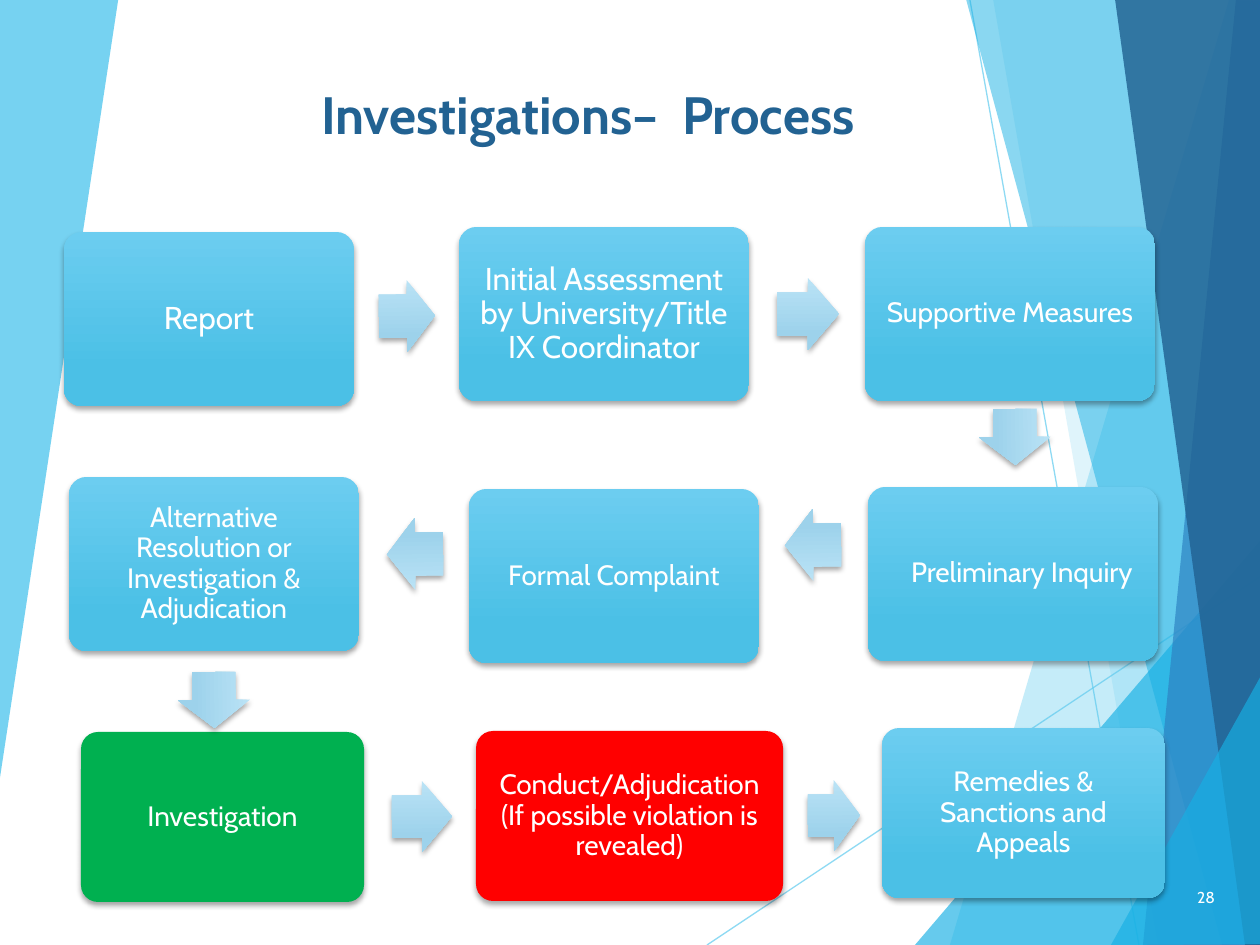
"""Build the investigations process slide: nine linked steps on a faceted backdrop."""
from lxml.etree import SubElement
from pptx import Presentation
from pptx.dml.color import RGBColor
from pptx.enum.shapes import MSO_CONNECTOR, MSO_SHAPE
from pptx.enum.text import MSO_ANCHOR, MSO_AUTO_SIZE, PP_ALIGN
from pptx.oxml.ns import qn
from pptx.util import Pt

PX = 914400 / 126
THEME = {
    "font": "Cabin",
    "sky": "5FCBEF", "azure": "17B0E4", "blue": "2E83C3", "navy": "226292",
    "white": "FFFFFF", "green": "00B050", "red": "FF0000", "shadow": "000000",
    "step": ("6CCDF0", "4BC0E6"), "arrow": ("BAE3F6", "9DD2EB"),
    "title_size": 30, "large": 18, "body": 16, "small": 9,
}


def write(frame, text, size, color, align, anchor, margins, bold=False, spacing=1.0):
    frame.text = text
    left, right, vertical = (round(m * PX) for m in margins)
    frame_format = {
        "word_wrap": True, "auto_size": MSO_AUTO_SIZE.NONE, "vertical_anchor": anchor,
        "margin_left": left, "margin_right": right,
        "margin_top": vertical, "margin_bottom": vertical,
    }
    paragraph = frame.paragraphs[0]
    font = paragraph.runs[0].font
    for target, values in (
        (frame, frame_format),
        (paragraph, {"alignment": align, "line_spacing": spacing}),
        (font, {"name": THEME["font"], "size": Pt(size), "bold": bold}),
    ):
        for key, value in values.items():
            setattr(target, key, value)
    font.color.rgb = RGBColor.from_string(THEME[color])


def add_block(kind, bounds, color, adjustments):
    block = slide.shapes.add_shape(kind, *(round(n * PX) for n in bounds))
    for index, value in enumerate(adjustments):
        block.adjustments[index] = value
    if isinstance(THEME[color], tuple):
        block.fill.gradient()
        block.fill.gradient_angle = 270
        for stop, shade, position in zip(block.fill.gradient_stops, THEME[color], (0, 0.78)):
            stop.color.rgb = RGBColor.from_string(shade)
            stop.position = position
    else:
        block.fill.solid()
        block.fill.fore_color.rgb = RGBColor.from_string(THEME[color])
    block.line.fill.background()
    block.shadow.inherit = False
    effects = block._element.spPr.find(qn("a:effectLst"))
    outer = SubElement(effects, qn("a:outerShdw"), blurRad=str(Pt(3)), dist=str(Pt(2)),
                       dir="5400000", rotWithShape="0")
    shade = SubElement(outer, qn("a:srgbClr"), val=THEME["shadow"])
    SubElement(shade, qn("a:alpha"), val="35000")
    return block


deck = Presentation()
deck.slide_width, deck.slide_height = round(1260 * PX), round(945 * PX)
slide = deck.slides.add_slide(deck.slide_layouts[5])

for ends in ((707, 945, 1261, 576), (970, 0, 1139, 945)):
    ray = slide.shapes.add_connector(MSO_CONNECTOR.STRAIGHT, *(round(n * PX) for n in ends))
    ray.line.width = Pt(0.75)
    ray.line.color.rgb = RGBColor.from_string(THEME["sky"])
    ray_color = ray._element.spPr.find(".//" + qn("a:srgbClr"))
    SubElement(ray_color, qn("a:alpha"), val="70000")
    SubElement(ray._element.spPr, qn("a:effectLst"))

facets = [
    ("sky", 36, [(1229, 0), (950, 945), (1262, 946), (1261, 1)]),
    ("sky", 20, [(993, -1), (1158, 945), (1261, 945), (1261, -1)]),
    ("azure", 66, [(915, 945), (1260, 541), (1261, 945)]),
    ("azure", 50, [(966, -1), (1222, 945), (1261, 944), (1261, -1)]),
    ("blue", 70, [(1236, -1), (1143, 945), (1261, 945), (1260, -1)]),
    ("navy", 82, [(1115, -1), (1245, 945), (1262, 945), (1260, -1)]),
    ("azure", 66, [(1111, 945), (1262, 674), (1262, 944)]),
    ("sky", 85, [(-1, 0), (118, -1), (118, 1), (-1, 784)]),
]
for color, opacity, corners in facets:
    outline = slide.shapes.build_freeform(*corners[0], scale=PX)
    outline.add_line_segments(corners[1:], close=True)
    facet = outline.convert_to_shape()
    facet.fill.solid()
    facet.fill.fore_color.rgb = RGBColor.from_string(THEME[color])
    facet_color = facet._element.spPr.find(".//" + qn("a:srgbClr"))
    SubElement(facet_color, qn("a:alpha"), val=str(opacity * 1000))
    facet.line.fill.background()
    facet.shadow.inherit = False

title = slide.shapes.title
for side, length in {"left": 21, "top": -6, "width": 1134, "height": 157}.items():
    setattr(title, side, round(length * PX))
write(title.text_frame, "Investigations–  Process", THEME["title_size"], "navy",
      PP_ALIGN.CENTER, MSO_ANCHOR.BOTTOM, (13, 13, 6), bold=True)

page_number = slide.shapes.add_textbox(*(round(n * PX) for n in (935, 872, 293, 50)))
write(page_number.text_frame, "28", THEME["small"], "white",
      PP_ALIGN.RIGHT, MSO_ANCHOR.MIDDLE, (13, 13, 6))

even, shifted = (14, 14, 14), (23, 5, 14)
steps = [
    ("Report", (64, 232, 290, 174), "step", "large", even),
    ("Initial Assessment by University/Title IX Coordinator",
     (459, 227, 290, 174), "step", "large", even),
    ("Supportive Measures", (865, 227, 290, 174), "step", "body", even),
    ("Preliminary Inquiry", (868, 487, 290, 174), "step", "body", shifted),
    ("Formal Complaint", (469, 489, 290, 174), "step", "body", even),
    ("Alternative Resolution or Investigation & Adjudication",
     (69, 477, 290, 174), "step", "body", even),
    ("Investigation", (81, 732, 283, 170), "green", "body", even),
    ("Conduct/Adjudication (If possible violation is revealed)",
     (476, 731, 307, 170), "red", "body", even),
    ("Remedies & Sanctions and Appeals", (882, 728, 283, 170), "step", "body", even),
]
for label, bounds, color, size, margins in steps:
    step = add_block(MSO_SHAPE.ROUNDED_RECTANGLE, bounds, color, [0.1])
    write(step.text_frame, label, THEME[size], "white", PP_ALIGN.CENTER,
          MSO_ANCHOR.MIDDLE, margins, spacing=0.9)

arrows = [
    ((379, 280, 56, 72), 359.3),
    ((777, 278, 62, 72), 0),
    ((987, 401, 56, 72), 89.3),
    ((785, 509, 56, 72), 179.3),
    ((387, 518, 56, 72), 179.3),
    ((186, 664, 56, 72), 89.3),
    ((392, 781, 60, 71), 359.8),
    ((808, 780, 52, 71), 359.6),
]
for bounds, turn in arrows:
    add_block(MSO_SHAPE.RIGHT_ARROW, bounds, "arrow", [0.6, 0.5]).rotation = turn

deck.save("out.pptx")
